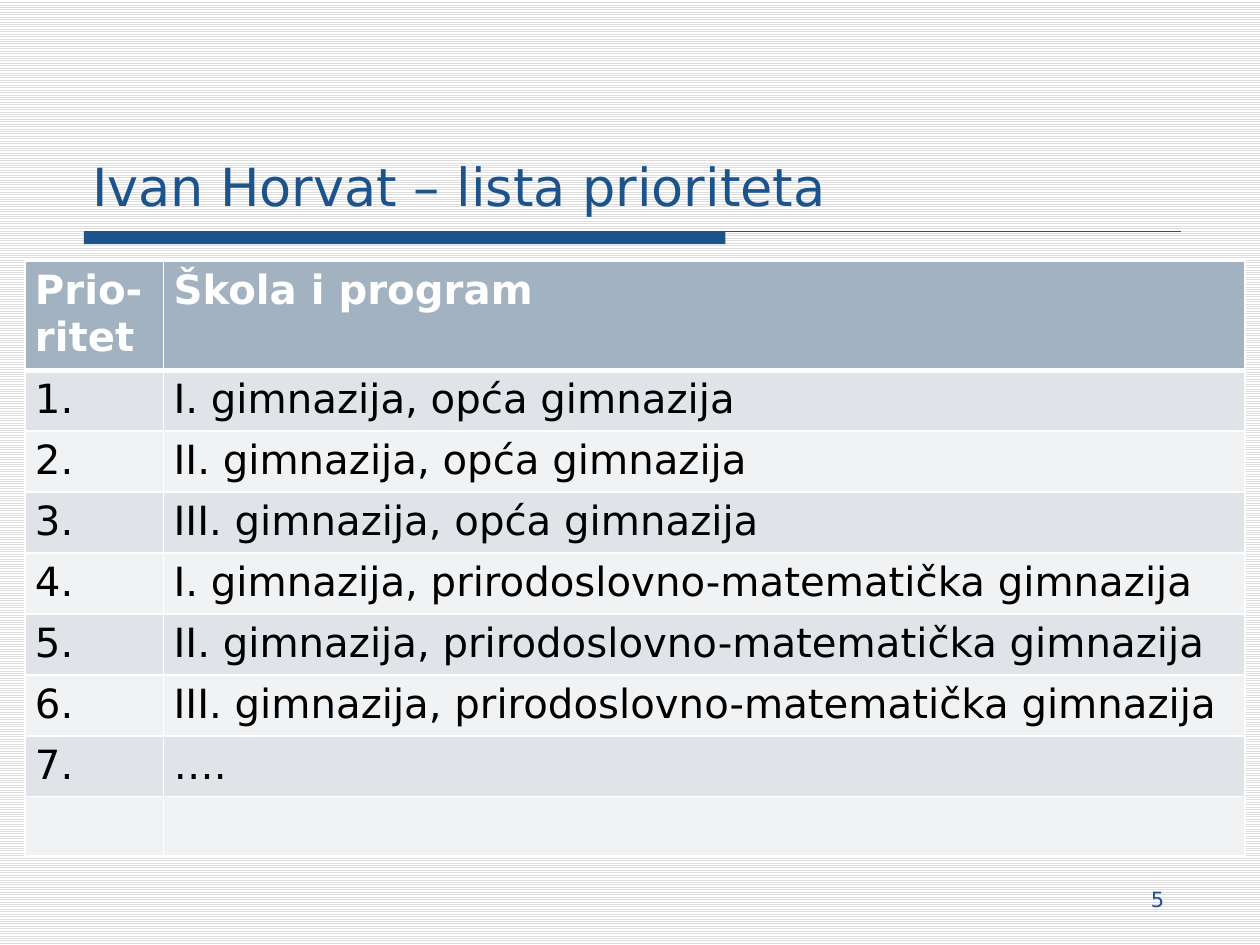
from dataclasses import dataclass

from lxml import etree
from pptx import Presentation
from pptx.dml.color import RGBColor
from pptx.enum.dml import MSO_PATTERN
from pptx.enum.shapes import MSO_CONNECTOR, MSO_SHAPE
from pptx.enum.text import MSO_ANCHOR, PP_ALIGN
from pptx.oxml.ns import qn
from pptx.util import Pt

STRIPES = MSO_PATTERN.LIGHT_HORIZONTAL
RECTANGLE = MSO_SHAPE.RECTANGLE
STRAIGHT = MSO_CONNECTOR.STRAIGHT
BOTTOM = MSO_ANCHOR.BOTTOM
LEFT, RIGHT = PP_ALIGN.LEFT, PP_ALIGN.RIGHT
TITLE_ONLY = 5


@dataclass(frozen=True)
class Theme:
    font: str = "DejaVu Sans"
    blue: str = "1D538B"
    white: str = "FFFFFF"
    black: str = "000000"
    stripe: str = "DDDDDD"
    header: str = "A3B2C1"
    bands: tuple = ("E0E4E9", "F0F2F4")
    title_size: int = 30
    table_size: int = 23
    number_size: int = 12


THEME = Theme()

ROWS = [
    ("Prio-ritet", "Škola i program"),
    ("1.", "I. gimnazija, opća gimnazija"),
    ("2.", "II. gimnazija, opća gimnazija"),
    ("3.", "III. gimnazija, opća gimnazija"),
    ("4.", "I. gimnazija, prirodoslovno-matematička gimnazija"),
    ("5.", "II. gimnazija, prirodoslovno-matematička gimnazija"),
    ("6.", "III. gimnazija, prirodoslovno-matematička gimnazija"),
    ("7.", "…."),
    ("", ""),
]
COL_WIDTHS = (79.2, 618)
HEADER_HEIGHT, ROW_HEIGHT = 60.5, 33.7


def rgb(value):
    return RGBColor.from_string(value)


def set_text(tf, text, size, color, bold=False, align=LEFT):
    tf.text = text
    p = tf.paragraphs[0]
    p.alignment = align
    for r in p.runs:
        r.font.name = THEME.font
        r.font.size = Pt(size)
        r.font.bold = bold
        r.font.color.rgb = rgb(color)


def set_background(slide):
    fill = slide.background.fill
    fill.patterned()
    fill.pattern = STRIPES
    fill.fore_color.rgb = rgb(THEME.stripe)
    fill.back_color.rgb = rgb(THEME.white)


def add_title(slide, text):
    sp = slide.shapes.title
    sp.left, sp.top, sp.width, sp.height = Pt(45.4), Pt(88.6), Pt(630), Pt(38.9)
    set_text(sp.text_frame, text, THEME.title_size, THEME.blue)
    sp.text_frame.vertical_anchor = BOTTOM


def add_title_rule(slide):
    """Thin line across the slide with a thick bar under its left part."""
    left, top = Pt(48), Pt(132.3)
    bar = slide.shapes.add_shape(RECTANGLE, left, top, Pt(366.5), Pt(7.2))
    bar.shadow.inherit = False
    bar.fill.solid()
    bar.fill.fore_color.rgb = rgb(THEME.blue)
    bar.line.fill.background()

    line = slide.shapes.add_connector(STRAIGHT, left, top, Pt(674.8), top)
    line.line.color.rgb = rgb(THEME.blue)
    line.line.width = Pt(0.75)
    etree.SubElement(line._element.spPr, qn("a:effectLst"))


def set_borders(cell, top, bottom):
    tc_pr = cell._tc.get_or_add_tcPr()
    for side, width in (("L", 1), ("R", 1), ("T", top), ("B", bottom)):
        ln = etree.SubElement(tc_pr, qn(f"a:ln{side}"), w=str(Pt(width)))
        fill = etree.SubElement(ln, qn("a:solidFill"))
        etree.SubElement(fill, qn("a:srgbClr"), val=THEME.white)


def format_cell(cell, text, row):
    is_header = row == 0
    cell.margin_left = cell.margin_right = Pt(5.8)
    cell.margin_top = cell.margin_bottom = Pt(3.6)
    set_borders(cell, top=3 if row == 1 else 1, bottom=3 if is_header else 1)
    cell.fill.solid()
    band = THEME.header if is_header else THEME.bands[(row - 1) % 2]
    cell.fill.fore_color.rgb = rgb(band)
    color = THEME.white if is_header else THEME.black
    set_text(cell.text_frame, text, THEME.table_size, color, bold=is_header)


def add_priority_table(slide):
    heights = [HEADER_HEIGHT] + [ROW_HEIGHT] * (len(ROWS) - 1)
    frame = slide.shapes.add_table(len(ROWS), len(COL_WIDTHS), Pt(14.2), Pt(149.2),
                                   Pt(sum(COL_WIDTHS)), Pt(sum(heights)))
    table = frame.table
    for column, width in zip(table.columns, COL_WIDTHS):
        column.width = Pt(width)
    for i, (texts, height) in enumerate(zip(ROWS, heights)):
        table.rows[i].height = Pt(height)
        for j, text in enumerate(texts):
            format_cell(table.cell(i, j), text, i)


def add_slide_number(slide, number):
    sp = slide.shapes.add_textbox(Pt(516.2), Pt(503.3), Pt(156.2), Pt(28))
    sp.text_frame.word_wrap = True
    set_text(sp.text_frame, number, THEME.number_size, THEME.blue, align=RIGHT)


def main():
    prs = Presentation()
    prs.slide_width, prs.slide_height = Pt(720), Pt(540)
    slide = prs.slides.add_slide(prs.slide_layouts[TITLE_ONLY])
    set_background(slide)
    add_title_rule(slide)
    add_title(slide, "Ivan Horvat – lista prioriteta")
    add_slide_number(slide, "5")
    add_priority_table(slide)
    prs.save("out.pptx")


if __name__ == "__main__":
    main()
